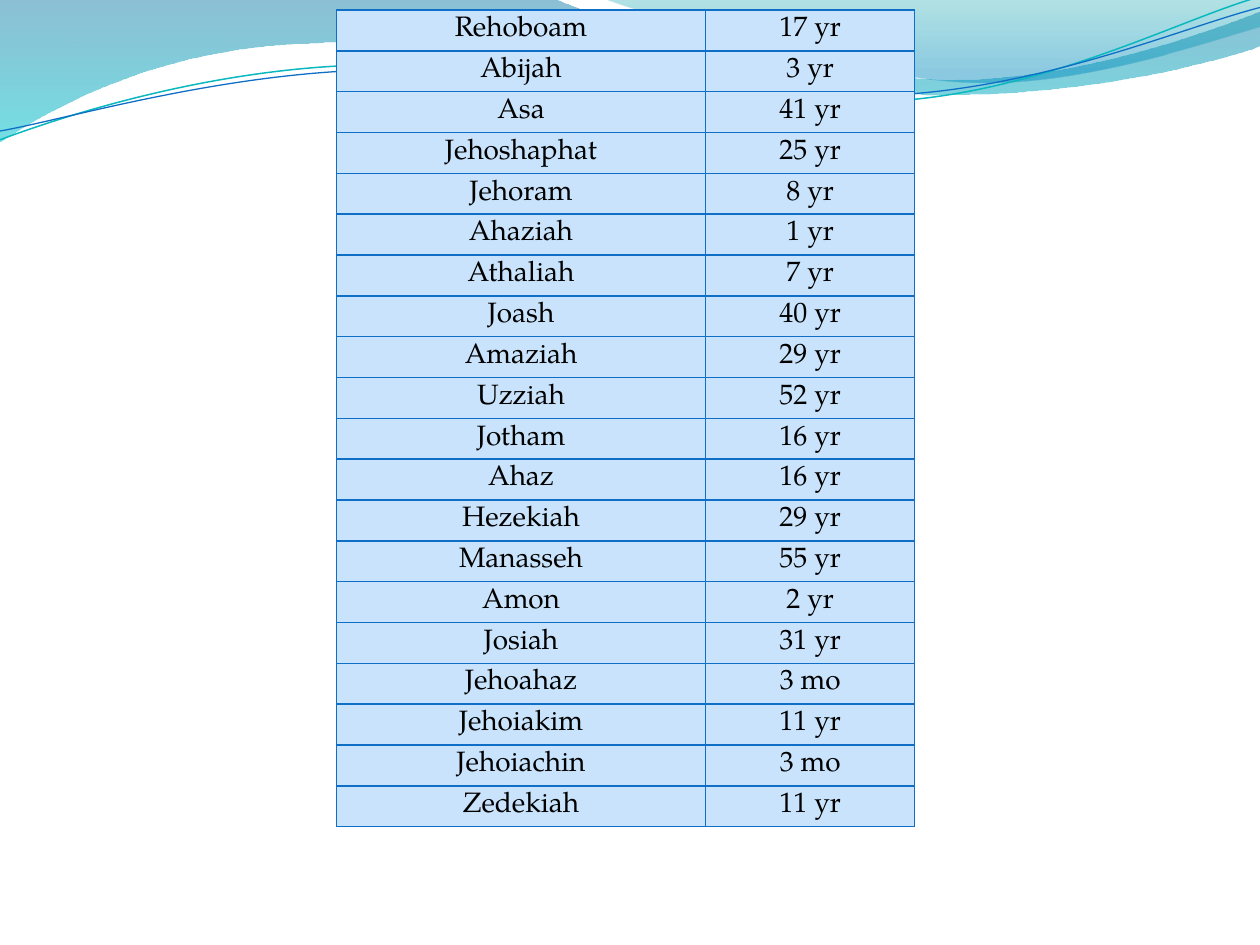
import math
from lxml import etree
from pptx import Presentation, util as u
from pptx.dml.color import RGBColor
from pptx.enum import text
from pptx.oxml import ns

REIGNS = [
    ("Rehoboam", "17 yr"), ("Abijah", "3 yr"), ("Asa", "41 yr"),
    ("Jehoshaphat", "25 yr"), ("Jehoram", "8 yr"), ("Ahaziah", "1 yr"),
    ("Athaliah", "7 yr"), ("Joash", "40 yr"), ("Amaziah", "29 yr"),
    ("Uzziah", "52 yr"), ("Jotham", "16 yr"), ("Ahaz", "16 yr"),
    ("Hezekiah", "29 yr"), ("Manasseh", "55 yr"), ("Amon", "2 yr"),
    ("Josiah", "31 yr"), ("Jehoahaz", "3 mo"), ("Jehoiakim", "11 yr"),
    ("Jehoiachin", "3 mo"), ("Zedekiah", "11 yr"),
]
BROAD_WAVE = [
    [(0, 0)], [(4.4, -0.01)],
    [(4.76, 0.17), (6.64, 0.63), (7.58, 0.63)],
    [(8.53, 0.63), (9.58, 0.26), (10, 0.09)], [(10.01, 0.36)],
    [(9.83, 0.44), (8.7, 0.76), (7.46, 0.75)],
    [(6.22, 0.75), (3.82, 0.28), (2.57, 0.34)],
    [(1.29, 0.36), (0.46, 0.83), (-0.01, 1.13)],
]
RIGHT_WAVE = [
    [(4.79, -0.01)], [(5.09, 0.11), (6.82, 0.62), (7.69, 0.65)],
    [(8.56, 0.69), (9.61, 0.32), (10, 0.21)], [(10, 0)],
]
TEAL_STRAND = [
    [(0, 1.11)], [(0.48, 0.93), (1.58, 0.57), (2.77, 0.52)],
    [(3.95, 0.47), (5.93, 0.89), (7.13, 0.8)],
    [(8.33, 0.71), (9.38, 0.15), (9.98, -0.02)],
]
BLUE_STRAND = [
    [(0, 1.04)], [(0.47, 0.96), (1.64, 0.61), (2.83, 0.56)],
    [(4.03, 0.51), (5.97, 0.84), (7.17, 0.75)],
    [(8.36, 0.67), (9.41, 0.21), (10, 0.06)],
]


def rgb(value):
    return RGBColor.from_string(value)


def turn(point, degrees):
    x, y = point
    cos, sin = math.cos(math.radians(degrees)), math.sin(math.radians(degrees))
    return x * cos - y * sin, x * sin + y * cos


class WaveSlide:
    """Holds the table style and the current slide."""

    font, size, ink = "TeX Gyre Pagella", 16, "000000"
    cell_fill, border = "C8E3FB", "0F6FC6"

    def __init__(self, deck):
        self.slide = deck.slides.add_slide(deck.slide_layouts[6])

    def outline(self, segments, close):
        corners = [(u.Inches(x), u.Inches(y)) for part in segments for x, y in part]
        builder = self.slide.shapes.build_freeform(*corners[0])
        builder.add_line_segments(corners[1:], close=close)
        shape = builder.convert_to_shape()
        shape.shadow.inherit = False
        outline = next(shape._element.iter(ns.qn("a:path")))
        lines = iter(outline.findall(ns.qn("a:lnTo")))
        for part in segments[1:]:
            steps = [next(lines) for _ in part]
            if len(steps) == 3:
                curve = etree.Element(ns.qn("a:cubicBezTo"))
                steps[0].addprevious(curve)
                for step in steps:
                    curve.append(step[0])
                    outline.remove(step)
        return shape

    def wave(self, segments, stops):
        shape = self.outline(segments, True)
        shape.line.fill.background()
        shape.fill.gradient()
        shape.fill.gradient_angle = 270
        stop_list = next(shape._element.iter(ns.qn("a:gsLst")))
        for stop in list(stop_list):
            stop_list.remove(stop)
        for place, colour, alpha in stops:
            stop = etree.SubElement(stop_list, ns.qn("a:gs"), pos=str(place * 1000))
            tint = etree.SubElement(stop, ns.qn("a:srgbClr"), val=colour)
            etree.SubElement(tint, ns.qn("a:alpha"), val=str(alpha * 1000))

    def strand(self, segments, colour, width, tilt=-2.7):
        level = [[turn(point, -tilt) for point in part] for part in segments]
        shape = self.outline(level, False)
        centre = shape.left + shape.width / 2, shape.top + shape.height / 2
        x, y = turn(centre, tilt)
        shape.left, shape.top = int(x - shape.width / 2), int(y - shape.height / 2)
        shape.rotation = tilt
        shape.fill.background()
        shape.line.color.rgb = rgb(colour)
        shape.line.width = u.Pt(width)

    def cell(self, cell, content):
        cell.text = content
        paragraph = cell.text_frame.paragraphs[0]
        paragraph.alignment = text.PP_ALIGN.CENTER
        paragraph.font.name = self.font
        paragraph.font.size = u.Pt(self.size)
        paragraph.font.color.rgb = rgb(self.ink)
        properties = cell._tc.get_or_add_tcPr()
        for side in ("lnL", "lnR", "lnT", "lnB"):
            edge = etree.SubElement(properties, ns.qn(f"a:{side}"), w=str(u.Pt(1)))
            solid = etree.SubElement(edge, ns.qn("a:solidFill"))
            etree.SubElement(solid, ns.qn("a:srgbClr"), val=self.border)
        cell.fill.solid()
        cell.fill.fore_color.rgb = rgb(self.cell_fill)

    def table(self, rows, left, top, widths, row_height):
        frame = self.slide.shapes.add_table(
            len(rows), len(widths), u.Inches(left), u.Inches(top),
            u.Inches(sum(widths)), u.Inches(row_height * len(rows)))
        table = frame.table
        table.first_row = table.horz_banding = False
        for column, width in zip(table.columns, widths):
            column.width = u.Inches(width)
        for r, row in enumerate(rows):
            for c, content in enumerate(row):
                self.cell(table.cell(r, c), content)


def main():
    deck = Presentation()
    deck.slide_width, deck.slide_height = u.Inches(10), u.Inches(7.5)
    page = WaveSlide(deck)
    page.wave(BROAD_WAVE, [(0, "0074A1", 45), (100, "00C6CF", 55)])
    page.wave(RIGHT_WAVE, [(0, "00A1A9", 30), (80, "008BBF", 45)])
    page.strand(TEAL_STRAND, "0AB8BF", 0.85)
    page.strand(BLUE_STRAND, "0F6FC6", 0.75)
    page.table(REIGNS, 2.67, 0.08, (2.93, 1.66), 0.3)
    deck.save("out.pptx")


if __name__ == "__main__":
    main()
